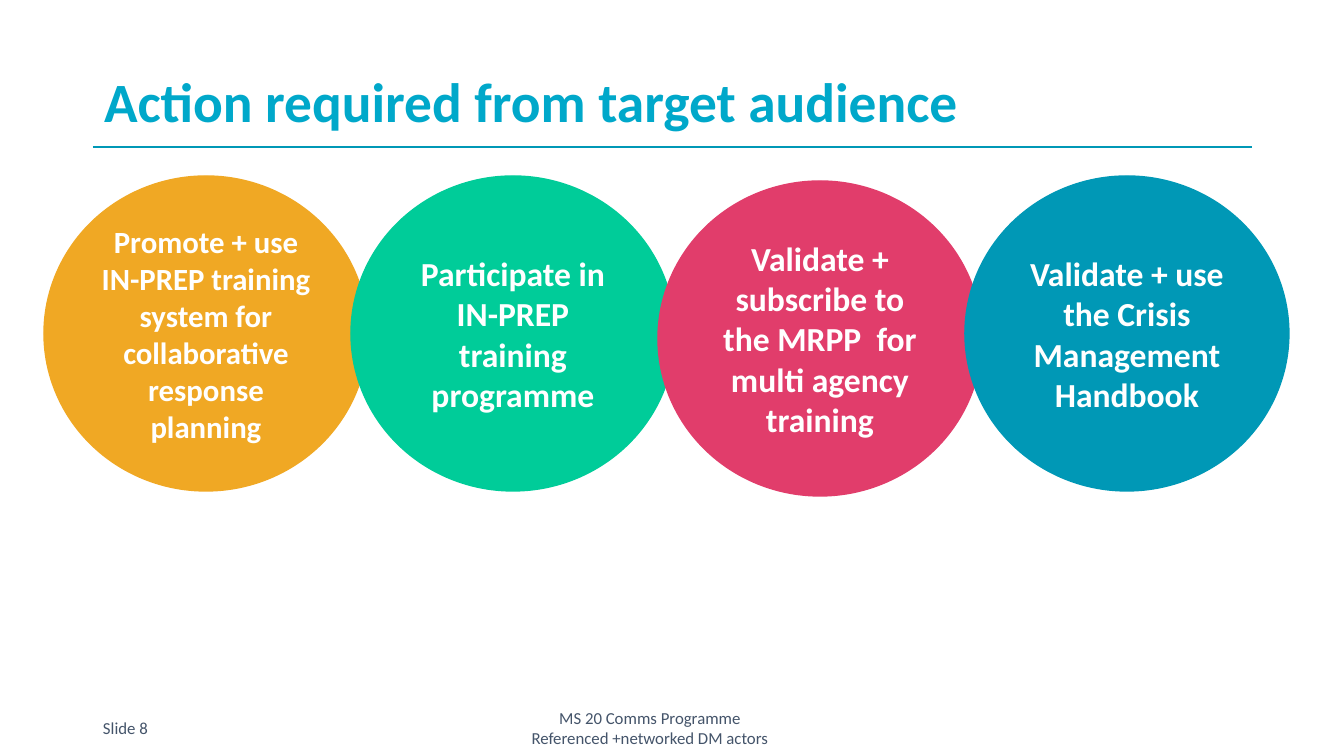
from dataclasses import dataclass

from lxml import etree
from pptx import Presentation
from pptx.dml.color import RGBColor
from pptx.enum.shapes import MSO_CONNECTOR, MSO_SHAPE
from pptx.enum.text import MSO_ANCHOR, PP_ALIGN
from pptx.oxml.ns import qn
from pptx.util import Emu, Pt

STRAIGHT = MSO_CONNECTOR.STRAIGHT
ELLIPSE = MSO_SHAPE.OVAL
TOP, MIDDLE = MSO_ANCHOR.TOP, MSO_ANCHOR.MIDDLE
LEFT, CENTER = PP_ALIGN.LEFT, PP_ALIGN.CENTER
EMU_PER_PX = 914400 / 100.8


@dataclass(frozen=True)
class Theme:
    font: str = "Calibri"
    title: str = "00A8CA"
    footer: str = "44546A"
    white: str = "FFFFFF"
    amber: str = "F0A824"
    green: str = "00CC99"
    pink: str = "E13D6B"
    teal: str = "0098B6"
    title_size: float = 39.6
    circle_size: int = 24
    dense_size: int = 22
    footer_size: int = 12
    line_width: int = 1


@dataclass(frozen=True)
class Box:
    left: int
    top: int
    width: int
    height: int

    def emu(self):
        return [px(v) for v in (self.left, self.top, self.width, self.height)]


THEME = Theme()
ACTIONS = [
    ("Promote + use IN-PREP training system for collaborative response planning",
     THEME.amber, THEME.dense_size, 0),
    ("Participate in IN-PREP training programme", THEME.green, THEME.circle_size, 0),
    ("Validate + subscribe to the MRPP  for multi agency training",
     THEME.pink, THEME.circle_size, 5),
    ("Validate + use the Crisis Management Handbook", THEME.teal, THEME.circle_size, 0),
]


def px(value):
    return Emu(round(value * EMU_PER_PX))


def write_text(shape, lines, size, color, bold=False, align=LEFT,
               anchor=MIDDLE, inset=10, inset_y=5, spacing=1.0):
    frame = shape.text_frame
    frame.word_wrap = True
    frame.vertical_anchor = anchor
    frame.margin_left = frame.margin_right = px(inset)
    frame.margin_top = frame.margin_bottom = px(inset_y)
    for index, line in enumerate(lines):
        paragraph = frame.add_paragraph() if index else frame.paragraphs[0]
        paragraph.alignment = align
        paragraph.line_spacing = spacing
        run = paragraph.add_run()
        run.text = line
        run.font.name = THEME.font
        run.font.size = Pt(size)
        run.font.bold = bold
        run.font.color.rgb = RGBColor.from_string(color)


def add_label(slide, box, lines, size, color, **style):
    write_text(slide.shapes.add_textbox(*box.emu()), lines, size, color, **style)


def add_header(slide, box):
    rule_y = px(box.top + box.height)
    rule = slide.shapes.add_connector(
        STRAIGHT, px(box.left), rule_y, px(box.left + box.width), rule_y)
    rule.line.color.rgb = RGBColor.from_string(THEME.teal)
    rule.line.width = Pt(THEME.line_width)
    etree.SubElement(rule._element.spPr, qn("a:effectLst"))
    add_label(slide, Box(box.left + 1, box.top, box.width, 104),
              ["Action required from target audience"], THEME.title_size, THEME.title,
              bold=True, anchor=TOP, inset_y=0, spacing=0.9)


def add_action_circles(slide, box):
    diameter = 324
    step = (box.width - diameter) / (len(ACTIONS) - 1)
    for index, (action, color, size, drop) in enumerate(ACTIONS):
        circle_box = Box(box.left + round(index * step), box.top + drop, diameter, box.height)
        circle = slide.shapes.add_shape(ELLIPSE, *circle_box.emu())
        circle.shadow.inherit = False
        circle.fill.solid()
        circle.fill.fore_color.rgb = RGBColor.from_string(color)
        circle.line.color.rgb = RGBColor.from_string(color)
        circle.line.width = Pt(THEME.line_width)
        write_text(circle, [action], size, THEME.white, bold=True, align=CENTER, inset=9)


def add_footer(slide, box):
    add_label(slide, Box(box.left + 330, box.top, 454, box.height),
              ["MS 20 Comms Programme", "Referenced +networked DM actors"],
              THEME.footer_size, THEME.footer, align=CENTER)
    add_label(slide, Box(box.left, box.top, 81, box.height),
              ["Slide 8"], THEME.footer_size, THEME.footer)


def main():
    presentation = Presentation()
    presentation.slide_width = px(1344)
    presentation.slide_height = px(756)
    slide = presentation.slides.add_slide(presentation.slide_layouts[6])
    add_header(slide, Box(93, 75, 1159, 72))
    add_footer(slide, Box(93, 708, 1159, 40))
    add_action_circles(slide, Box(44, 176, 1245, 315))
    presentation.save("out.pptx")


if __name__ == "__main__":
    main()
